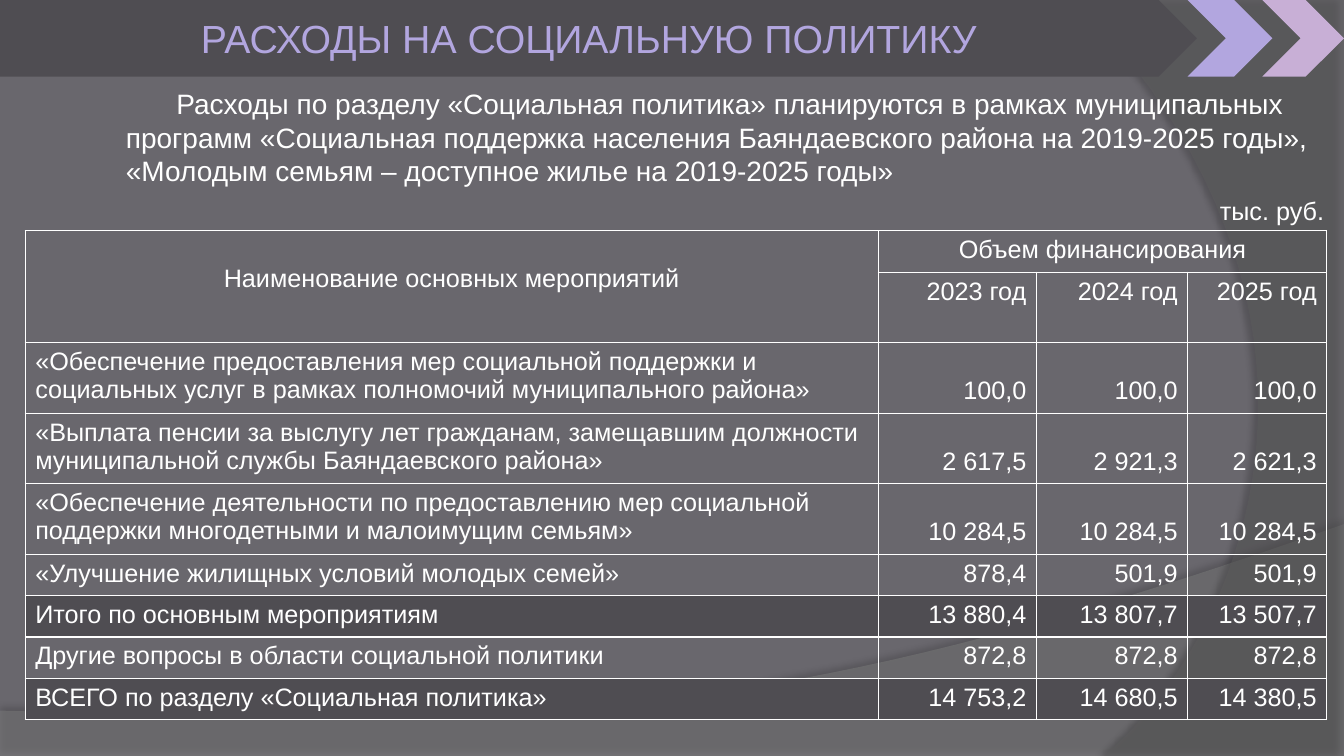
from dataclasses import dataclass

from lxml import etree
from pptx import Presentation
from pptx import util as u
from pptx.dml import color
from pptx.enum import shapes, text
from pptx.oxml import ns


@dataclass(frozen=True)
class Theme:
    font: str = "Arial"
    background: str = "69676D"
    panel: str = "4F4D52"
    lilac: str = "B2A6DF"
    pink: str = "C8AFD6"
    white: str = "FFFFFF"
    wave: str = "7F7F7F"
    arc: str = "5E5E5E"
    shadow: str = "000000"
    title_size: int = 28
    intro_size: int = 20
    table_size: int = 18


THEME = Theme()
LEFT, CENTER, RIGHT = text.PP_ALIGN.LEFT, text.PP_ALIGN.CENTER, text.PP_ALIGN.RIGHT
LINE_HEIGHT, DOUBLE_HEIGHT = 0.41, 0.7
SECOND_LINE_MARGIN = 0.34
COLUMN_WIDTHS = (8.46, 1.57, 1.5, 1.38)
YEARS = ("2023 год", "2024 год", "2025 год")
EXPENSES = (
    ("«Обеспечение предоставления мер социальной поддержки и социальных услуг в рамках "
     "полномочий муниципального района»", "100,0", "100,0", "100,0"),
    ("«Выплата пенсии за выслугу лет гражданам, замещавшим должности муниципальной службы "
     "Баяндаевского района»", "2 617,5", "2 921,3", "2 621,3"),
    ("«Обеспечение деятельности по предоставлению мер социальной поддержки многодетными "
     "и малоимущим семьям»", "10 284,5", "10 284,5", "10 284,5"),
    ("«Улучшение жилищных условий молодых семей»", "878,4", "501,9", "501,9"),
    ("Итого по основным мероприятиям", "13 880,4", "13 807,7", "13 507,7"),
    ("Другие вопросы в области социальной политики", "872,8", "872,8", "872,8"),
    ("ВСЕГО по разделу «Социальная политика»", "14 753,2", "14 680,5", "14 380,5"),
)
DOUBLE_EXPENSES = 3
TOTAL_EXPENSES = (4, 6)


def rgb(value):
    return color.RGBColor.from_string(value)


def add_xml(parent, tag, **attributes):
    return etree.SubElement(parent, ns.qn(tag), attributes)


def write(frame, content, size, ink=THEME.white, align=LEFT):
    paragraph = frame.paragraphs[0]
    paragraph.alignment = align
    run = paragraph.add_run()
    run.text = content
    run.font.name = THEME.font
    run.font.size = u.Pt(size)
    run.font.color.rgb = rgb(ink)
    return paragraph


def paint(shape, fill):
    shape.shadow.inherit = False
    shape.fill.solid()
    shape.fill.fore_color.rgb = rgb(fill)
    shape.line.fill.background()


def add_block(slide, kind, left, width, fill):
    shape = slide.shapes.add_shape(
        kind, u.Inches(left), u.Inches(0), u.Inches(width), u.Inches(0.76))
    paint(shape, fill)
    return shape


def add_text(slide, left, top, width, height, content, size, wrap=True):
    box = slide.shapes.add_textbox(
        u.Inches(left), u.Inches(top), u.Inches(width), u.Inches(height))
    box.text_frame.word_wrap = wrap
    return write(box.text_frame, content, size)


def curve(start, first, second, end, steps=40):
    points = []
    for step in range(1, steps + 1):
        t = step / steps
        weights = ((1 - t) ** 3, 3 * t * (1 - t) ** 2, 3 * t * t * (1 - t), t ** 3)
        corners = (start, first, second, end)
        points.append(tuple(sum(w * corner[axis] for w, corner in zip(weights, corners))
                            for axis in (0, 1)))
    return points


def add_backdrop(slide, points, fill, opacity, shadow_opacity, distance, direction):
    outline = [(u.Inches(x), u.Inches(y)) for x, y in points]
    builder = slide.shapes.build_freeform(*outline[0])
    builder.add_line_segments(outline[1:], close=True)
    shape = builder.convert_to_shape()
    paint(shape, fill)
    properties = shape.element.spPr
    solid = properties.find(ns.qn("a:solidFill"))
    add_xml(solid[0], "a:alpha", val=str(opacity * 1000))
    effects = properties.find(ns.qn("a:effectLst"))
    shadow = add_xml(effects, "a:outerShdw", blurRad=str(u.Pt(4)),
                     dist=str(u.Pt(distance)), dir=str(direction * 60000),
                     algn="ctr", rotWithShape="0")
    shade = add_xml(shadow, "a:srgbClr", val=THEME.shadow)
    add_xml(shade, "a:alpha", val=str(shadow_opacity * 1000))


def style_cell(cell, fill=None):
    properties = cell._tc.get_or_add_tcPr()
    for side in ("a:lnL", "a:lnR", "a:lnT", "a:lnB"):
        border = add_xml(properties, side, w=str(u.Pt(1)))
        add_xml(add_xml(border, "a:solidFill"), "a:srgbClr", val=THEME.white)
    if fill:
        cell.fill.solid()
        cell.fill.fore_color.rgb = rgb(fill)
    else:
        cell.fill.background()


def write_cell(cell, content, align, second_line=False):
    if second_line:
        cell.margin_top = u.Inches(SECOND_LINE_MARGIN)
    write(cell.text_frame, content, THEME.table_size, align=align)


def add_expense_table(slide):
    heights = [LINE_HEIGHT] + [DOUBLE_HEIGHT] * (1 + DOUBLE_EXPENSES)
    heights += [LINE_HEIGHT] * (len(EXPENSES) - DOUBLE_EXPENSES)
    table = slide.shapes.add_table(
        len(heights), len(COLUMN_WIDTHS), u.Inches(0.25), u.Inches(2.29),
        u.Inches(sum(COLUMN_WIDTHS)), u.Inches(sum(heights))).table
    table.first_row = table.horz_banding = False
    for column, width in zip(table.columns, COLUMN_WIDTHS):
        column.width = u.Inches(width)
    for index, height in enumerate(heights):
        table.rows[index].height = u.Inches(height)
        fill = THEME.panel if index - 2 in TOTAL_EXPENSES else None
        for cell in table.rows[index].cells:
            style_cell(cell, fill)

    table.cell(0, 0).merge(table.cell(1, 0))
    table.cell(0, 1).merge(table.cell(0, 3))
    write_cell(table.cell(0, 0), "Наименование основных мероприятий", CENTER, True)
    write_cell(table.cell(0, 1), "Объем финансирования", CENTER)
    for column, year in enumerate(YEARS, 1):
        write_cell(table.cell(1, column), year, RIGHT)
    for index, (label, *amounts) in enumerate(EXPENSES):
        write_cell(table.cell(index + 2, 0), label, LEFT)
        for column, amount in enumerate(amounts, 1):
            write_cell(table.cell(index + 2, column), amount, RIGHT, index < DOUBLE_EXPENSES)


def main():
    presentation = Presentation()
    presentation.slide_width = u.Inches(13.33)
    presentation.slide_height = u.Inches(7.5)
    slide = presentation.slides.add_slide(presentation.slide_layouts[6])
    slide.background.fill.solid()
    slide.background.fill.fore_color.rgb = rgb(THEME.background)

    wave = [(0, 7.05), (0, 7.5), (13.33, 7.5), (13.33, 5.2)]
    wave += curve(wave[-1], (7.45, 7.29), (5.21, 7.19), wave[0])
    add_backdrop(slide, wave, THEME.wave, 45, 35, 3.5, 270)
    arc = [(13.33, 0), (13.33, 7.5), (10.95, 7.5)]
    arc += curve(arc[-1], (12.46, 6.19), (13.57, 3), (10.67, 0))
    add_backdrop(slide, arc, THEME.arc, 40, 45, 4, 180)

    add_expense_table(slide)

    kinds = shapes.MSO_SHAPE
    title = add_block(slide, kinds.PENTAGON, 0, 11.87, THEME.panel)
    title.text_frame.vertical_anchor = text.MSO_ANCHOR.MIDDLE
    write(title.text_frame, "РАСХОДЫ НА СОЦИАЛЬНУЮ ПОЛИТИКУ",
          THEME.title_size, THEME.lilac, CENTER)
    add_block(slide, kinds.CHEVRON, 11.78, 0.84, THEME.lilac)
    add_block(slide, kinds.CHEVRON, 12.52, 0.81, THEME.pink)

    intro = add_text(
        slide, 1.15, 0.81, 12.09, 1.11,
        "Расходы по разделу «Социальная политика» планируются в рамках муниципальных "
        "программ «Социальная поддержка населения Баяндаевского района на 2019-2025 годы», "
        "«Молодым семьям – доступное жилье на 2019-2025 годы»", THEME.intro_size)
    intro._p.get_or_add_pPr().set("indent", str(u.Inches(0.5)))
    add_text(slide, 12, 1.89, 1.25, 0.4, "тыс. руб.", THEME.table_size, wrap=False)

    presentation.save("out.pptx")


if __name__ == "__main__":
    main()
